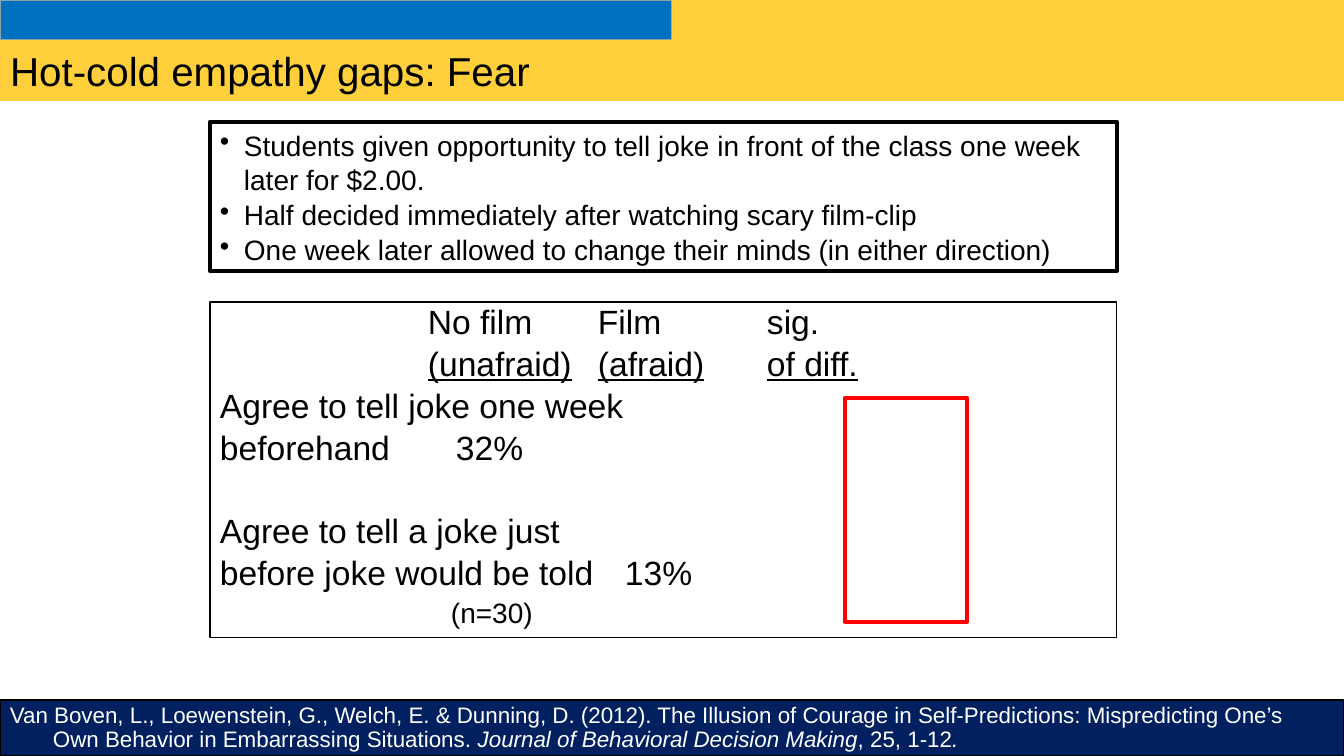
from lxml.etree import SubElement
from pptx import Presentation
from pptx.dml.color import RGBColor
from pptx.enum.shapes import MSO_SHAPE
from pptx.enum.text import MSO_ANCHOR, PP_ALIGN
from pptx.oxml.ns import qn
from pptx.util import Emu, Pt

BLACK = RGBColor(0x00, 0x00, 0x00)
WHITE = RGBColor(0xFF, 0xFF, 0xFF)
BLUE = RGBColor(0x00, 0x70, 0xC0)
GOLD = RGBColor(0xFF, 0xD0, 0x3B)
GREY = RGBColor(0x8A, 0xA6, 0xA8)
RED = RGBColor(0xFF, 0x00, 0x00)
NAVY = RGBColor(0x00, 0x20, 0x60)

TITLE = "Hot-cold empathy gaps: Fear"
METHOD = [
    "Students given opportunity to tell joke in front of the class one week later for $2.00.",
    "Half decided immediately after watching scary film-clip",
    "One week later allowed to change their minds (in either direction)",
]
COLUMNS = (208, 378, 547)
# label, cells, tab stops in px, size, space before, underlined
RESULTS = [
    ("", ["No film", "Film", "sig."], COLUMNS, 24, 0, False),
    ("", ["(unafraid)", "(afraid)", "of diff."], COLUMNS, 24, 0, True),
    ("Agree to tell joke one week", [], (), 24, 0, False),
    ("beforehand", ["32%"], (236,), 24, 0, False),
    ("Agree to tell a joke just", [], (), 24, 29, False),
    ("before joke would be told", ["13%"], (405,), 24, 0, False),
    ("", ["(n=30)"], (231,), 20, 0, False),
]
CITATION = [
    ("Van Boven, L., Loewenstein, G., Welch, E. & Dunning, D. (2012). The Illusion of Courage in "
     "Self-Predictions: Mispredicting One’s Own Behavior in Embarrassing Situations. ", False),
    ("Journal of Behavioral Decision Making", True),
    (", 25, 1-12", False),
    (".", True),
]


def px(length):
    """Turn px into EMU."""
    return Emu(round(length * 914400 / 100.8))


def add_box(slide, area, fill, line=None, width=0, anchor=MSO_ANCHOR.TOP):
    """Add a flat rectangle."""
    box = slide.shapes.add_shape(MSO_SHAPE.RECTANGLE, *map(px, area))
    box.shadow.inherit = False
    if fill is None:
        box.fill.background()
    else:
        box.fill.solid()
        box.fill.fore_color.rgb = fill
    if line is None:
        box.line.fill.background()
    else:
        box.line.color.rgb = line
        box.line.width = Pt(width)
    box.text_frame.word_wrap = True
    box.text_frame.vertical_anchor = anchor
    return box


def add_paragraph(frame, index):
    """Return the paragraph to fill, left aligned."""
    paragraph = frame.add_paragraph() if index else frame.paragraphs[0]
    paragraph.alignment = PP_ALIGN.LEFT
    return paragraph


def set_hanging(paragraph, indent):
    """Give a paragraph a hanging indent."""
    properties = paragraph._p.get_or_add_pPr()
    properties.set("marL", str(px(indent)))
    properties.set("indent", str(-px(indent)))
    return properties


def set_font(paragraph, size, color=BLACK):
    """Set the font of a paragraph."""
    paragraph.font.name = "Arial"
    paragraph.font.size = Pt(size)
    paragraph.font.color.rgb = color


def add_title(slide, top_bar):
    """Place and format the title."""
    title = slide.shapes.title
    title.left, title.top, title.width, title.height = map(px, (0, 40, 1344, 61))
    title.fill.solid()
    title.fill.fore_color.rgb = GOLD
    frame = title.text_frame
    frame.text = TITLE
    frame.vertical_anchor = MSO_ANCHOR.MIDDLE
    set_font(add_paragraph(frame, 0), 28.8)
    top_bar._element.addnext(title._element)


def add_results(slide):
    """Add the results laid out on tab stops."""
    frame = add_box(slide, (210, 302, 907, 336), WHITE, BLACK, 0.75).text_frame
    for index, (label, cells, stops, size, before, underlined) in enumerate(RESULTS):
        paragraph = add_paragraph(frame, index)
        paragraph.line_spacing = 0.85
        paragraph.space_before = Pt(before)
        paragraph.space_after = Pt(5.6)
        if stops:
            tabs = SubElement(paragraph._p.get_or_add_pPr(), qn("a:tabLst"))
            for stop in stops:
                SubElement(tabs, qn("a:tab"), pos=str(px(stop)), algn="l")
        set_font(paragraph, size)
        if label:
            paragraph.add_run().text = label
        for cell in cells:
            paragraph.add_run().text = "\t"
            run = paragraph.add_run()
            run.text = cell
            if underlined:
                run.font.underline = True


def add_method(slide):
    """Add the bulleted description of the study."""
    frame = add_box(slide, (210, 122, 907, 149), WHITE, BLACK, 3, MSO_ANCHOR.MIDDLE).text_frame
    for index, step in enumerate(METHOD):
        paragraph = add_paragraph(frame, index)
        paragraph.line_spacing = 1.04
        SubElement(set_hanging(paragraph, 24), qn("a:buChar"), char="•")
        set_font(paragraph, 20)
        paragraph.add_run().text = step


def add_citation(slide):
    """Add the reference along the bottom."""
    frame = add_box(slide, (0, 700, 1344, 56), NAVY, BLACK, 0.75, MSO_ANCHOR.MIDDLE).text_frame
    paragraph = add_paragraph(frame, 0)
    paragraph.line_spacing = 0.89
    set_hanging(paragraph, 43)
    set_font(paragraph, 16, WHITE)
    for text, italic in CITATION:
        run = paragraph.add_run()
        run.text = text
        run.font.italic = italic


def main():
    """Build the slide."""
    deck = Presentation()
    deck.slide_width, deck.slide_height = px(1344), px(756)
    slide = deck.slides.add_slide(deck.slide_layouts[5])
    add_box(slide, (0, 0, 672, 40), BLUE, GREY, 2)
    add_title(slide, add_box(slide, (672, 0, 672, 40), GOLD))
    add_results(slide)
    add_method(slide)
    add_box(slide, (845, 398, 122, 224), None, RED, 3)
    add_citation(slide)
    deck.save("out.pptx")


if __name__ == "__main__":
    main()
